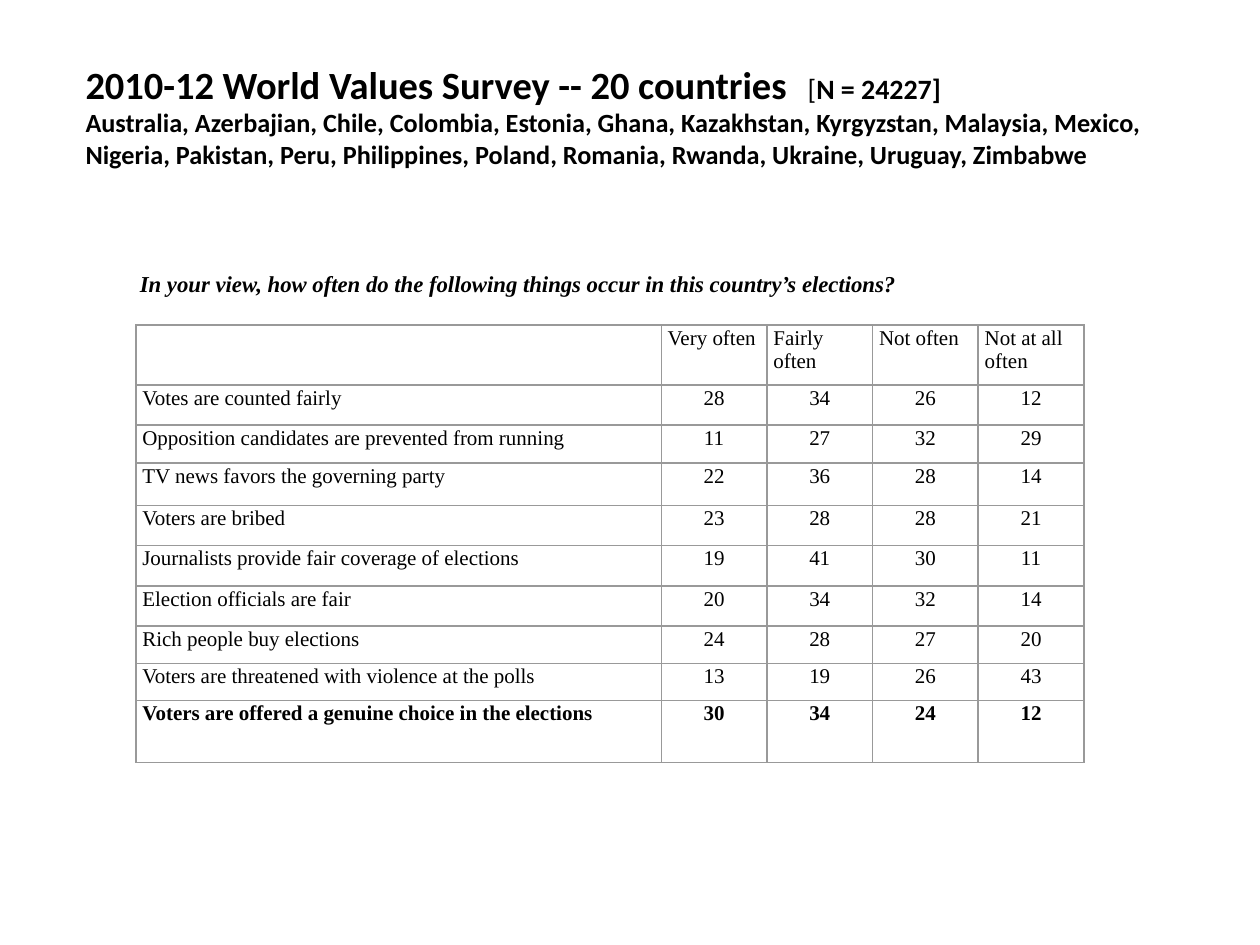
from lxml import etree
from pptx import Presentation
from pptx import util as u
from pptx.dml.color import RGBColor
from pptx.enum import text
from pptx.oxml import ns

SERIF = "Times New Roman"


def set_font(font, name, size, bold=False, italic=False, color="000000"):
    font.name, font.size = name, u.Pt(size)
    font.bold, font.italic = bold, italic
    font.color.rgb = RGBColor.from_string(color)


def add_borders(cell, color="999999"):
    """Draw a 1 pt line on all four sides of a cell without fill."""
    properties = cell._tc.get_or_add_tcPr()
    for side in ("a:lnL", "a:lnR", "a:lnT", "a:lnB"):
        line = etree.SubElement(properties, ns.qn(side), w=str(u.Pt(1)))
        fill = etree.SubElement(line, ns.qn("a:solidFill"))
        etree.SubElement(fill, ns.qn("a:srgbClr"), val=color)
    cell.fill.background()


deck = Presentation()
deck.slide_width, deck.slide_height = u.Cm(25.4), u.Cm(19.05)
page = deck.slides.add_slide(deck.slide_layouts[5])

# Title with the list of countries
title = page.shapes.title
title.left, title.top = u.Cm(1.47), u.Cm(0.84)
title.width, title.height = u.Cm(22.86), u.Cm(4.01)
frame = title.text_frame
frame.word_wrap = True
frame.auto_size = text.MSO_AUTO_SIZE.NONE
frame.vertical_anchor = text.MSO_ANCHOR.TOP
frame.margin_top = u.Cm(0.38)
heading = frame.paragraphs[0]
heading.alignment = text.PP_ALIGN.LEFT
title_spans = [
    ("2010-12 World Values Survey -- 20 countries", 22, True),
    (" ", 22, False),
    ("[", 16, False),
    ("N = 24227]", 16, True),
    None,
    ("Australia, Azerbajian, Chile, Colombia, Estonia, Ghana, Kazakhstan, "
     "Kyrgyzstan, Malaysia, Mexico,", 15, True),
    None,
    ("Nigeria, Pakistan, Peru, Philippines, Poland, Romania, Rwanda, "
     "Ukraine, Uruguay, Zimbabwe", 15, True),
]
for item in title_spans:
    if item is None:
        heading.add_line_break()
        continue
    words, size, bold = item
    span = heading.add_run()
    span.text = words
    set_font(span.font, "Calibri", size, bold)
    if words == " ":
        span.font._element.set("spc", "680")  # widens the gap before N

# Answers in percent
header = ["", "Very often", "Fairly often", "Not often", "Not at all often"]
answers = [
    ("Votes are counted fairly", 28, 34, 26, 12),
    ("Opposition candidates are prevented from running", 11, 27, 32, 29),
    ("TV news favors the governing party", 22, 36, 28, 14),
    ("Voters are bribed", 23, 28, 28, 21),
    ("Journalists provide fair coverage of elections", 19, 41, 30, 11),
    ("Election officials are fair", 20, 34, 32, 14),
    ("Rich people buy elections", 24, 28, 27, 20),
    ("Voters are threatened with violence at the polls", 13, 19, 26, 43),
    ("Voters are offered a genuine choice in the elections", 30, 34, 24, 12),
]
rows = [header, *answers]
row_heights = [1.21, 0.81, 0.76, 0.86, 0.81, 0.81, 0.81, 0.76, 0.74, 1.25]
column_widths = [10.59] + [2.13] * 4

table_frame = page.shapes.add_table(
    len(rows), len(header), u.Cm(2.74), u.Cm(6.55),
    u.Cm(sum(column_widths)), u.Cm(sum(row_heights)))
table = table_frame.table
table.first_row = table.horz_banding = False
for column, width in zip(table.columns, column_widths):
    column.width = u.Cm(width)
for row_index, (values, height) in enumerate(zip(rows, row_heights)):
    table.rows[row_index].height = u.Cm(height)
    for column_index, value in enumerate(values):
        cell = table.cell(row_index, column_index)
        cell.margin_left = cell.margin_right = u.Cm(0.13)
        cell.margin_top, cell.margin_bottom = u.Cm(0.03), 0
        add_borders(cell)
        cell.text = str(value)
        para = cell.text_frame.paragraphs[0]
        set_font(para.font, SERIF, 12, bold=row_index == len(rows) - 1)
        if row_index and column_index:
            para.alignment = text.PP_ALIGN.CENTER

# Survey question above the table
question = page.shapes.add_textbox(u.Cm(2.11), u.Cm(5.28), u.Cm(20.52), u.Cm(1.57))
frame = question.text_frame
frame.word_wrap = True
frame.margin_left, frame.margin_top = u.Cm(0.71), u.Cm(0.15)
para = frame.paragraphs[0]
para.text = "In your view, how often do the following things occur in this country’s elections?"
set_font(para.font, SERIF, 13, bold=True, italic=True)

deck.save("out.pptx")
